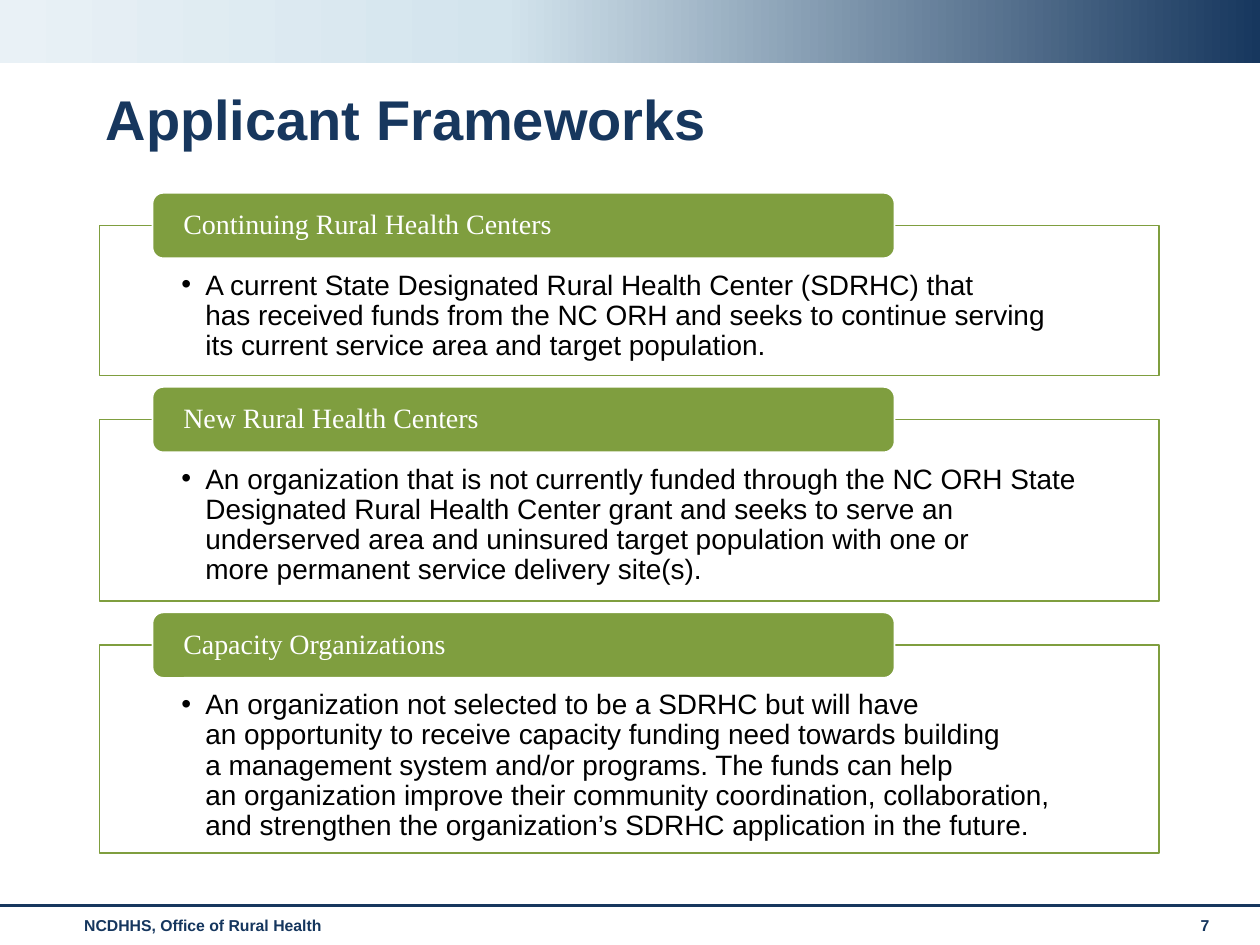
from copy import deepcopy

from lxml.etree import SubElement
from pptx import Presentation
from pptx.dml.color import RGBColor
from pptx.enum.shapes import MSO_CONNECTOR, MSO_SHAPE
from pptx.enum.text import MSO_ANCHOR, PP_ALIGN
from pptx.oxml.ns import qn
from pptx.util import Inches, Pt

COLORS = {
    "navy": "17375E",
    "footer": "15365E",
    "pale": "D3E4ED",
    "mist": "E9F1F6",
    "green": "7F9E3F",
    "white": "FFFFFF",
    "black": "000000",
}

# A tilde in a description stands for a no-break space.
NO_BREAK_SPACE = chr(160)
FRAMEWORKS = [
    ("Continuing Rural Health Centers", 1.19,
     "A current State Designated Rural~Health Center (SDRHC) that has~received funds "
     "from the NC ORH~and seeks to continue serving its~current service area and "
     "target~population."),
    ("New Rural Health Centers", 1.44,
     "An organization that is not~currently funded through the NC~ORH State Designated "
     "Rural~Health Center grant and seeks to~serve an underserved area and uninsured "
     "target~population with one or more~permanent service delivery site(s)."),
    ("Capacity Organizations", 1.65,
     "An organization not selected to be~a SDRHC but will have an~opportunity to receive "
     "capacity~funding need towards building a~management system and/or~programs. "
     "The funds can help an~organization improve their~community coordination,~"
     "collaboration, and strengthen the organization’s SDRHC application in the future."),
]
FIRST_TOP = 1.79
FRAME_GAP = 0.35
HEADER_RISE = 0.26


def rgb(name):
    return RGBColor.from_string(COLORS[name])


def write_text(shape, text, size, color, font="Arial", bold=False, spacing=1.0,
               anchor=MSO_ANCHOR.TOP, insets=(0.1, 0.05, 0.1, 0.05)):
    frame = shape.text_frame
    frame.text = text
    frame.word_wrap = True
    frame.vertical_anchor = anchor
    (frame.margin_left, frame.margin_top,
     frame.margin_right, frame.margin_bottom) = map(Inches, insets)
    paragraph = frame.paragraphs[0]
    paragraph.alignment = PP_ALIGN.LEFT
    paragraph.line_spacing = spacing
    run_font = paragraph.runs[0].font
    run_font.name = font
    run_font.size = Pt(size)
    run_font.bold = bold
    run_font.color.rgb = rgb(color)
    return paragraph


def add_label(slide, box, text, size, color, **options):
    shape = slide.shapes.add_textbox(*map(Inches, box))
    write_text(shape, text, size, color, bold=True, **options)


def add_box(slide, preset, box, fill, line):
    shape = slide.shapes.add_shape(preset, *map(Inches, box))
    shape.shadow.inherit = False
    shape.fill.solid()
    shape.fill.fore_color.rgb = rgb(fill)
    shape.line.color.rgb = rgb(line)
    shape.line.width = Pt(1)
    return shape


def add_bullet(paragraph, indent):
    properties = paragraph._p.get_or_add_pPr()
    properties.set("marL", str(Inches(indent)))
    properties.set("indent", str(-Inches(indent)))
    SubElement(properties, qn("a:buFont")).set("typeface", "Arial")
    SubElement(properties, qn("a:buChar")).set("char", "•")


def add_banner(slide):
    """Gradient band across the top, light on the left and navy on the right."""
    banner = slide.shapes.add_shape(MSO_SHAPE.RECTANGLE, 0, 0, Inches(10), Inches(0.5))
    banner.shadow.inherit = False
    banner.line.fill.background()
    banner.fill.gradient()
    banner.fill.gradient_angle = 180
    stop_list = banner._element.spPr.find(qn("a:gradFill")).find(qn("a:gsLst"))
    stop_list.insert(1, deepcopy(stop_list[0]))
    stops = [("navy", 0), ("pale", 0.6), ("mist", 1)]
    for stop, (color, position) in zip(banner.fill.gradient_stops, stops):
        stop.color.rgb = rgb(color)
        stop.position = position


def add_footer(slide):
    rule = slide.shapes.add_connector(
        MSO_CONNECTOR.STRAIGHT, 0, Inches(7.19), Inches(10), Inches(7.19))
    rule.line.color.rgb = rgb("navy")
    rule.line.width = Pt(1.75)
    SubElement(rule._element.spPr, qn("a:effectLst"))
    add_label(slide, (0.57, 7.22, 8.74, 0.29), "NCDHHS, Office of Rural Health", 9, "footer")
    add_label(slide, (9.43, 7.22, 0.44, 0.3), "7", 9, "footer")


def add_framework(slide, top, height, heading, description):
    """Outlined description with a rounded heading over its top edge."""
    frame = add_box(slide, MSO_SHAPE.RECTANGLE, (0.79, top, 8.41, height), "white", "green")
    paragraph = write_text(frame, description.replace("~", NO_BREAK_SPACE), 16, "black",
                           spacing=0.9, insets=(0.65, 0.36, 0.65, 0.12))
    add_bullet(paragraph, 0.19)
    header = add_box(slide, MSO_SHAPE.ROUNDED_RECTANGLE,
                     (1.21, top - HEADER_RISE, 5.89, 0.52), "green", "white")
    write_text(header, heading, 16, "white", font="Times New Roman", spacing=0.9,
               anchor=MSO_ANCHOR.MIDDLE, insets=(0.22, 0, 0.22, 0))


def main():
    presentation = Presentation()
    presentation.slide_width = Inches(10)
    presentation.slide_height = Inches(7.5)
    slide = presentation.slides.add_slide(presentation.slide_layouts[6])
    add_banner(slide)
    add_footer(slide)
    add_label(slide, (0.74, 0.67, 8.58, 0.6), "Applicant Frameworks", 32, "navy",
              spacing=0.9, anchor=MSO_ANCHOR.MIDDLE)
    top = FIRST_TOP
    for heading, height, description in FRAMEWORKS:
        add_framework(slide, top, height, heading, description)
        top += height + FRAME_GAP
    presentation.save("out.pptx")


if __name__ == "__main__":
    main()
